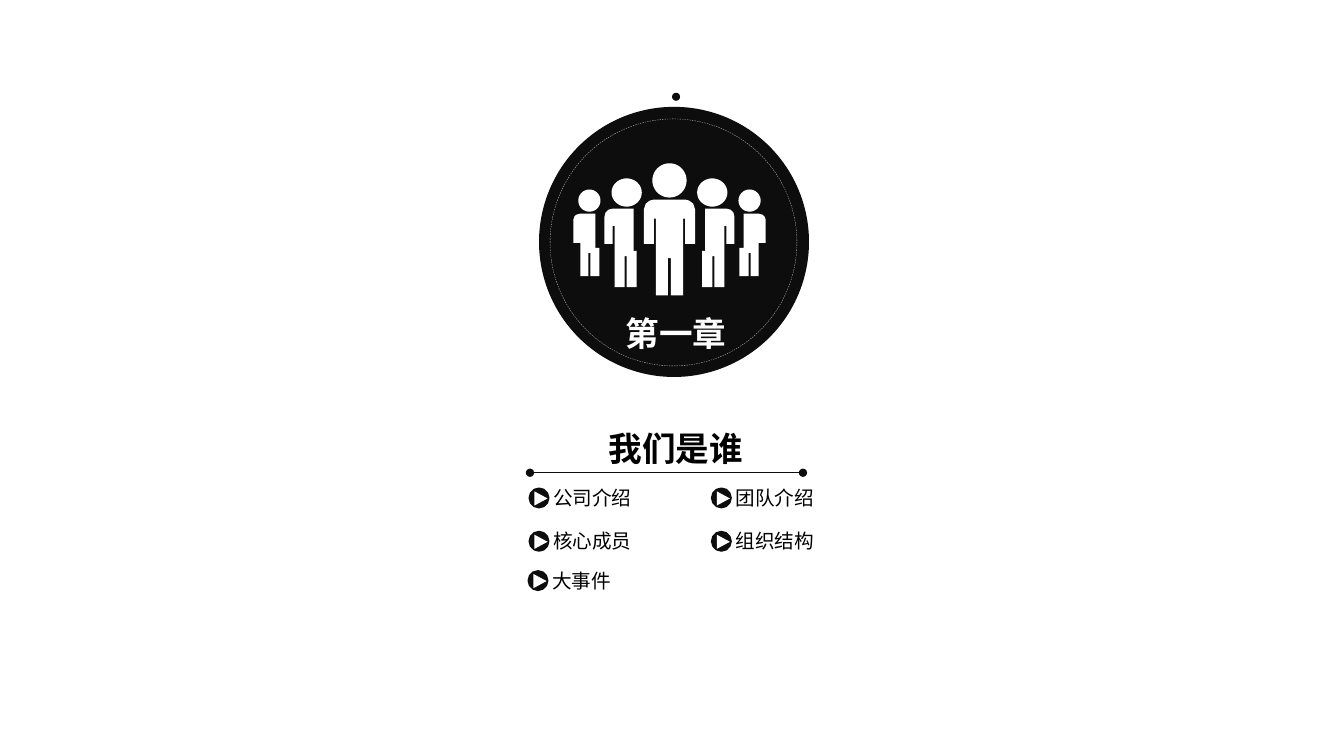
import math
from dataclasses import dataclass

from lxml import etree
from pptx import Presentation
from pptx.dml.color import RGBColor
from pptx.enum import dml, shapes, text
from pptx.oxml.ns import qn
from pptx.util import Inches, Pt

BLACK = RGBColor(0x00, 0x00, 0x00)
INK = RGBColor(0x0D, 0x0D, 0x0D)
WHITE = RGBColor(0xFF, 0xFF, 0xFF)
GREY = RGBColor(0xBF, 0xBF, 0xBF)
FONT = "Noto Sans CJK SC"
CROWD_AXIS = 6.645

Outline = list[tuple[float, float]]


@dataclass(frozen=True)
class Topic:
    label: str
    left: float
    top: float


@dataclass(frozen=True)
class Title:
    label: str
    top: float
    color: RGBColor


@dataclass(frozen=True)
class Head:
    x: float
    y: float
    radius_x: float
    radius_y: float


TOPICS = [
    Topic("公司介绍", 5.26, 4.82),
    Topic("团队介绍", 7.07, 4.82),
    Topic("核心成员", 5.26, 5.25),
    Topic("组织结构", 7.07, 5.25),
    Topic("大事件", 5.25, 5.64),
]
TITLES = [Title("我们是谁", 4.18, BLACK), Title("第一章", 3.04, WHITE)]

LEADER_HEAD = Head(CROWD_AXIS, 1.79, 0.17, 0.17)
SIDE_HEADS = [Head(6.22, 1.91, 0.15, 0.14), Head(5.85, 1.99, 0.11, 0.11)]
LEADER_HALF = [
    (6.49, 1.98), (6.45, 1.99), (6.41, 2.02), (6.39, 2.08), (6.39, 2.42), (6.49, 2.42),
    (6.49, 2.17), (6.51, 2.17), (6.51, 2.93), (6.63, 2.93), (6.63, 2.56),
]
SIDE_BODIES = [
    [
        (6.32, 2.49), (6.32, 2.85), (6.22, 2.85), (6.22, 2.54), (6.2, 2.54), (6.2, 2.85),
        (6.1, 2.85), (6.1, 2.24), (6.08, 2.24), (6.08, 2.42), (6, 2.42), (6, 2.15),
        (6.01, 2.11), (6.04, 2.08), (6.08, 2.07), (6.29, 2.07), (6.29, 2.49),
    ],
    [
        (5.95, 2.46), (5.95, 2.74), (5.86, 2.74), (5.86, 2.51), (5.84, 2.51), (5.84, 2.74),
        (5.76, 2.74), (5.76, 2.41), (5.69, 2.41), (5.69, 2.18),
        (5.7, 2.15), (5.72, 2.13), (5.76, 2.12), (5.91, 2.12), (5.91, 2.46),
    ],
]


def mirror(outline: Outline) -> Outline:
    return [(2 * CROWD_AXIS - x, y) for x, y in outline]


def head_outline(head: Head, steps: int = 48) -> Outline:
    angles = [2 * math.pi * step / steps for step in range(steps)]
    return [(head.x + head.radius_x * math.cos(angle), head.y + head.radius_y * math.sin(angle))
            for angle in angles]


def add_preset(parent, kind, left: float, top: float, width: float, height: float,
               fill=None, line=None, line_width: float = 1):
    shape = parent.add_shape(kind, Inches(left), Inches(top), Inches(width), Inches(height))
    shape.shadow.inherit = False
    if fill is None:
        shape.fill.background()
    else:
        shape.fill.solid()
        shape.fill.fore_color.rgb = fill
    if line is None:
        shape.line.fill.background()
    else:
        shape.line.color.rgb = line
        shape.line.width = Pt(line_width)
    return shape


def add_label(parent, label: str, left: float, top: float, width: float, height: float,
              size: float, color: RGBColor, bold: bool = False):
    box = parent.add_textbox(Inches(left), Inches(top), Inches(width), Inches(height))
    frame = box.text_frame
    frame.word_wrap = True
    run = frame.paragraphs[0].add_run()
    run.text = label
    run.font.size = Pt(size)
    run.font.bold = bold
    run.font.color.rgb = color
    run.font.name = FONT
    etree.SubElement(run.font._element, qn("a:ea"), typeface=FONT)
    return frame


def add_title(parent, title: Title) -> None:
    frame = add_label(parent, title.label, 5.41, title.top, 2.6, 0.52, 24, title.color, True)
    frame.vertical_anchor = text.MSO_ANCHOR.MIDDLE
    frame.paragraphs[0].alignment = text.PP_ALIGN.CENTER


def add_topic(parent, topic: Topic) -> None:
    group = parent.add_group_shape().shapes
    frame = add_label(group, topic.label, topic.left + 0.23, topic.top, 1.34, 0.24, 14, BLACK)
    frame.margin_left = frame.margin_top = frame.margin_right = frame.margin_bottom = 0
    frame.auto_size = text.MSO_AUTO_SIZE.SHAPE_TO_FIT_TEXT
    add_preset(group, shapes.MSO_SHAPE.OVAL, topic.left, topic.top + 0.03, 0.18, 0.18,
               INK, INK, 2)
    arrow = add_preset(group, shapes.MSO_SHAPE.ISOSCELES_TRIANGLE,
                       topic.left + 0.04, topic.top + 0.06, 0.14, 0.13, WHITE)
    arrow.rotation = 90


def add_crowd(parent) -> None:
    """Draw the leader and the mirrored pairs of people as one white outline."""
    one_side = SIDE_BODIES + [head_outline(head) for head in SIDE_HEADS]
    leader = LEADER_HALF + mirror(LEADER_HALF)[::-1]
    outlines = [head_outline(LEADER_HEAD), leader, *one_side, *map(mirror, one_side)]
    contours = [[(Inches(x), Inches(y)) for x, y in outline] for outline in outlines]
    builder = parent.build_freeform(*contours[0][0])
    for index, contour in enumerate(contours):
        if index:
            builder.move_to(*contour[0])
        builder.add_line_segments(contour[1:], close=True)
    crowd = builder.convert_to_shape()
    crowd.shadow.inherit = False
    crowd.fill.solid()
    crowd.fill.fore_color.rgb = WHITE
    crowd.line.fill.background()


def add_divider(parent) -> None:
    divider = parent.add_connector(shapes.MSO_CONNECTOR.STRAIGHT, Inches(5.26), Inches(4.69),
                                   Inches(7.97), Inches(4.69))
    divider.line.color.rgb = INK
    divider.line.width = Pt(0.75)
    line = divider.line._get_or_add_ln()
    for end in ("a:headEnd", "a:tailEnd"):
        etree.SubElement(line, qn(end), type="oval")
    etree.SubElement(divider._element.spPr, qn("a:effectLst"))


def main() -> None:
    presentation = Presentation()
    presentation.slide_width = Inches(13.34)
    presentation.slide_height = Inches(7.5)
    slide = presentation.slides.add_slide(presentation.slide_layouts[6])
    canvas = slide.shapes
    oval = shapes.MSO_SHAPE.OVAL

    add_preset(canvas, oval, 5.35, 1.06, 2.68, 2.68, INK)
    add_preset(canvas, oval, 6.67, 0.92, 0.08, 0.08, INK)
    for title in TITLES:
        add_title(canvas, title)
    add_crowd(canvas)
    ring = add_preset(canvas, oval, 5.46, 1.18, 2.45, 2.45, line=GREY, line_width=0.25)
    ring.line.dash_style = dml.MSO_LINE.DASH
    add_divider(canvas)
    for topic in TOPICS:
        add_topic(canvas, topic)
    presentation.save("out.pptx")


if __name__ == "__main__":
    main()
